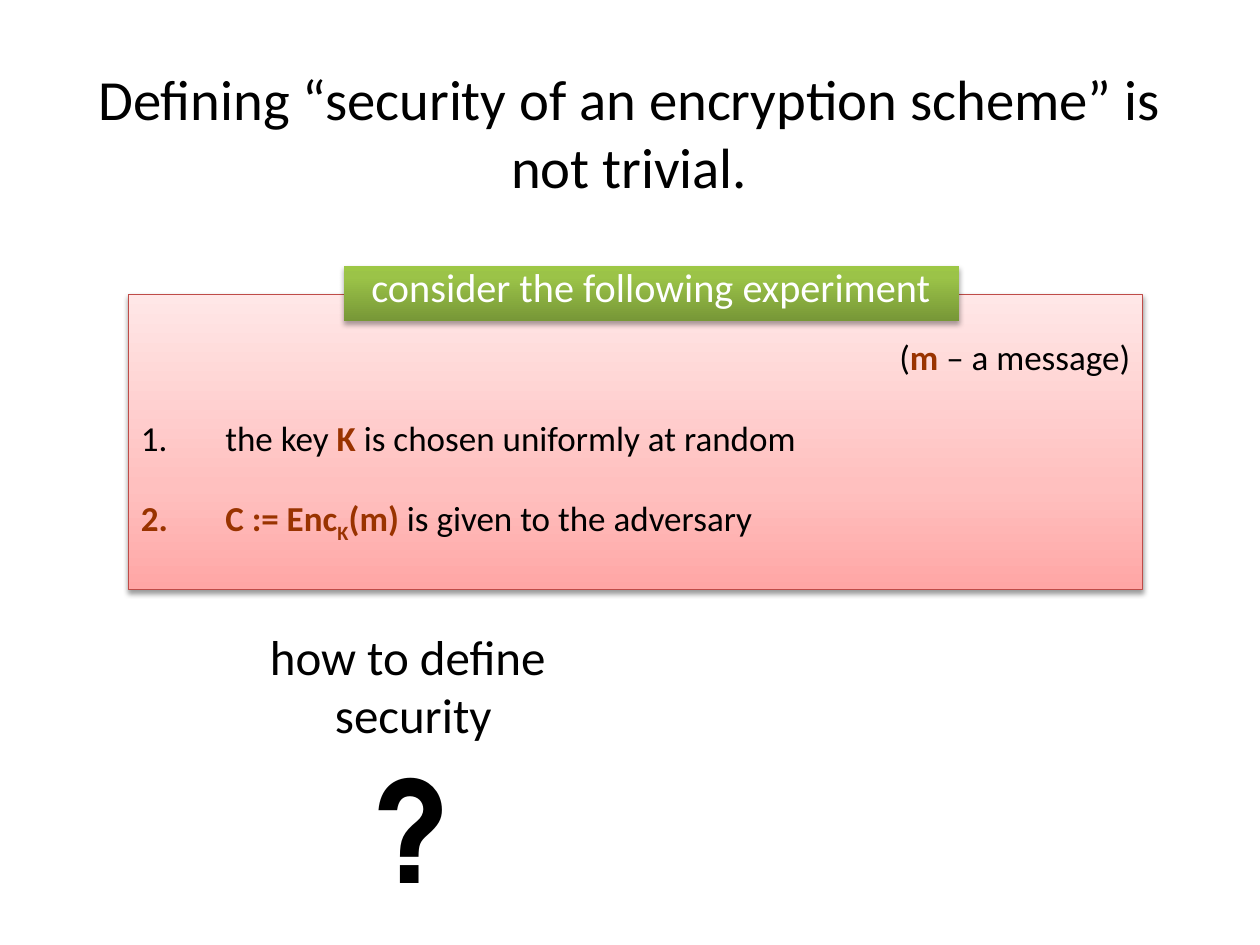
from copy import deepcopy

from lxml import etree
from pptx import Presentation
from pptx.dml.color import RGBColor
from pptx.enum.shapes import MSO_SHAPE
from pptx.enum.text import MSO_ANCHOR, PP_ALIGN
from pptx.oxml.ns import qn
from pptx.util import Inches, Pt

RECTANGLE = MSO_SHAPE.RECTANGLE
TOP, MIDDLE = MSO_ANCHOR.TOP, MSO_ANCHOR.MIDDLE
LEFT, CENTER, RIGHT = PP_ALIGN.LEFT, PP_ALIGN.CENTER, PP_ALIGN.RIGHT

BLACK = RGBColor(0x00, 0x00, 0x00)
WHITE = RGBColor(0xFF, 0xFF, 0xFF)
RUST = RGBColor(0x99, 0x33, 0x00)
RED_EDGE = RGBColor(0xBF, 0x4C, 0x48)
PINKS = [
    (0, RGBColor(0xFF, 0xA6, 0xA5)),
    (0.35, RGBColor(0xFF, 0xC0, 0xBF)),
    (1, RGBColor(0xFF, 0xE7, 0xE7)),
]
GREENS = [
    (0, RGBColor(0x77, 0x97, 0x37)),
    (0.8, RGBColor(0x9B, 0xC3, 0x48)),
    (1, RGBColor(0x9D, 0xC7, 0x46)),
]
BODY_FONT = "Calibri"
MARK_FONT = "TeX Gyre Adventor"


def set_gradient(panel, stops):
    panel.fill.gradient()
    panel.fill.gradient_angle = 90
    stop_list = panel.fill._xPr.find(qn("a:gradFill")).find(qn("a:gsLst"))
    stop_list.append(deepcopy(stop_list[-1]))
    for stop, (position, color) in zip(panel.fill.gradient_stops, stops):
        stop.position = position
        stop.color.rgb = color


def set_shadow(panel, opacity, distance):
    panel.shadow.inherit = False
    effects = panel._element.spPr.find(qn("a:effectLst"))
    shadow = etree.SubElement(
        effects, qn("a:outerShdw"), blurRad=str(Pt(3.1)), dist=str(Pt(distance)),
        dir="5400000", rotWithShape="0",
    )
    color = etree.SubElement(shadow, qn("a:srgbClr"), val=str(BLACK))
    etree.SubElement(color, qn("a:alpha"), val=str(opacity * 1000))


def add_panel(slide, box, stops, opacity, distance):
    panel = slide.shapes.add_shape(RECTANGLE, *map(Inches, box))
    set_gradient(panel, stops)
    set_shadow(panel, opacity, distance)
    panel.text_frame.word_wrap = True
    panel.text_frame.vertical_anchor = TOP
    return panel


def add_text_box(slide, box, anchor=TOP):
    frame = slide.shapes.add_textbox(*map(Inches, box)).text_frame
    frame.word_wrap = True
    frame.vertical_anchor = anchor
    return frame


def style_paragraph(paragraph, size, color=BLACK, align=CENTER, font=BODY_FONT):
    paragraph.alignment = align
    paragraph.font.size = Pt(size)
    paragraph.font.name = font
    paragraph.font.color.rgb = color


def add_formula(paragraph, text, subscript=False):
    run = paragraph.add_run()
    run.text = text
    run.font.bold = True
    run.font.color.rgb = RUST
    if subscript:
        run.font._element.set("baseline", "-25000")


def number_paragraph(paragraph):
    properties = paragraph._p.get_or_add_pPr()
    properties.set("marL", str(Inches(0.67)))
    properties.set("indent", str(Inches(-0.67)))
    numbering = etree.Element(qn("a:buAutoNum"), type="arabicPeriod")
    properties.find(qn("a:defRPr")).addprevious(numbering)


def add_title(slide):
    title = add_text_box(slide, (0.33, 0.42, 9.33, 1.25), MIDDLE).paragraphs[0]
    title.text = "Defining “security of an encryption scheme” is not trivial."
    style_paragraph(title, 32.4)


def add_experiment(slide):
    panel = add_panel(slide, (1.02, 2.34, 8.05, 2.34), PINKS, 38, 1.6)
    panel.line.color.rgb = RED_EDGE
    panel.line.width = Pt(0.75)
    frame = panel.text_frame
    frame.margin_top = Inches(0.39)

    message = frame.paragraphs[0]
    key_step = frame.add_paragraph()
    cipher_step = frame.add_paragraph()
    for paragraph, align, gap in (
        (message, RIGHT, 0), (key_step, LEFT, 27), (cipher_step, LEFT, 24.5),
    ):
        style_paragraph(paragraph, 20, align=align)
        paragraph.line_spacing = 0.8
        paragraph.space_before = Pt(gap)
    number_paragraph(key_step)
    number_paragraph(cipher_step)

    message.add_run().text = "("
    add_formula(message, "m")
    message.add_run().text = " – a message)"

    key_step.add_run().text = "the key "
    add_formula(key_step, "K")
    key_step.add_run().text = " is chosen uniformly at random"

    add_formula(cipher_step, "C := Enc")
    add_formula(cipher_step, "K", subscript=True)
    add_formula(cipher_step, "(m) ")
    cipher_step.add_run().text = "is given to the adversary"


def add_banner(slide):
    banner = add_panel(slide, (2.73, 2.11, 4.88, 0.44), GREENS, 35, 1.8)
    banner.line.fill.background()
    caption = banner.text_frame.paragraphs[0]
    caption.text = "consider the following experiment"
    caption.line_spacing = 0.8
    style_paragraph(caption, 23, WHITE)


def add_question(slide):
    frame = add_text_box(slide, (2.03, 4.92, 2.5, 2.39))
    question = frame.paragraphs[0]
    question.text = "how to define \vsecurity"
    style_paragraph(question, 28)
    mark = frame.add_paragraph()
    mark.text = "?"
    style_paragraph(mark, 80, font=MARK_FONT)
    mark.font.bold = True


def main():
    presentation = Presentation()
    presentation.slide_width = Inches(10)
    presentation.slide_height = Inches(7.5)
    slide = presentation.slides.add_slide(presentation.slide_layouts[6])
    add_title(slide)
    add_experiment(slide)
    add_banner(slide)
    add_question(slide)
    presentation.save("out.pptx")


if __name__ == "__main__":
    main()
